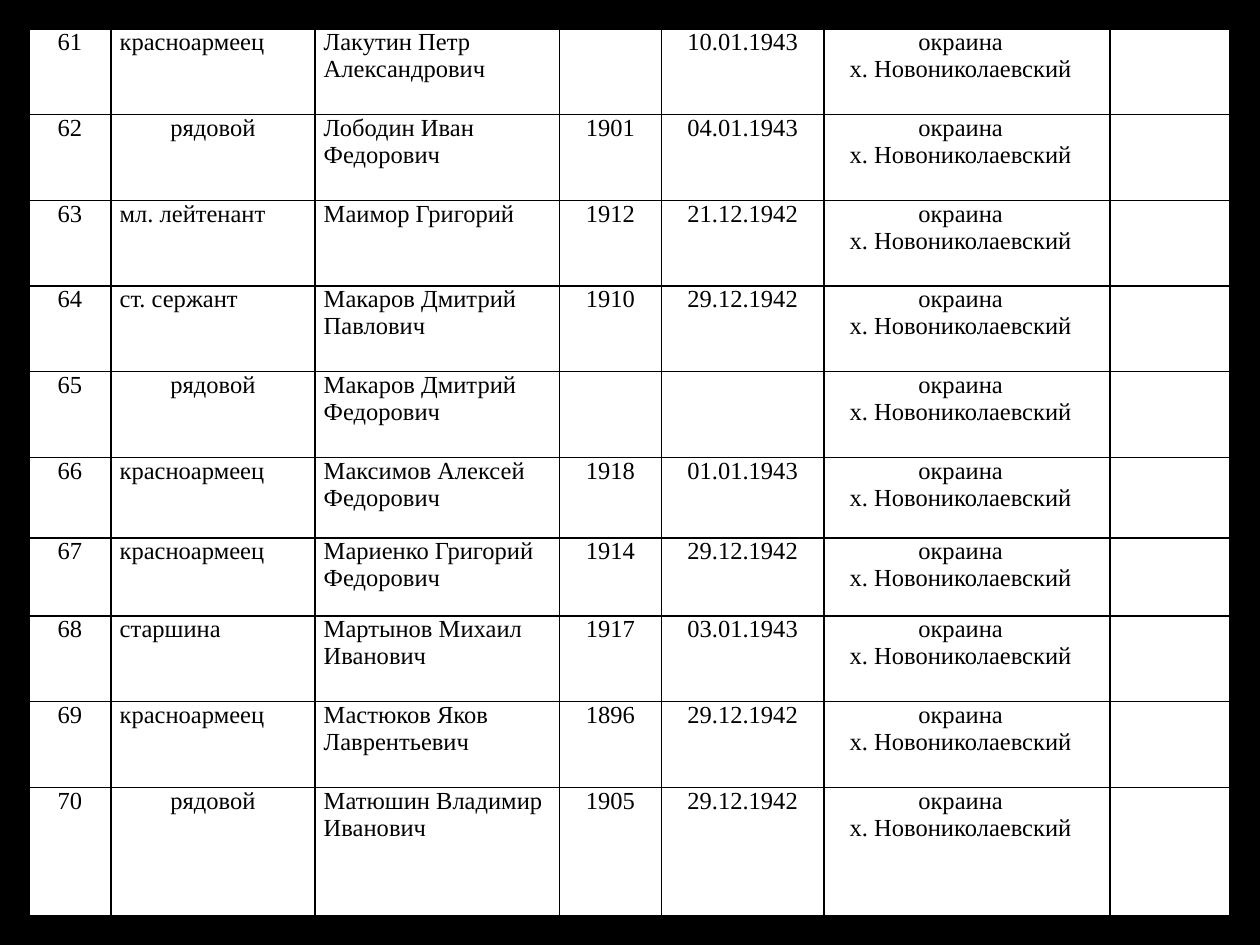
from lxml import etree
from pptx import Presentation
from pptx.dml.color import RGBColor
from pptx.enum import text
from pptx.oxml import ns
from pptx.util import Inches, Pt

COLORS = {"back": "000000", "cell": "FFFFFF", "ink": "000000", "line": "000000"}
FONT = "Times New Roman"
COLS = [0.65, 1.62, 1.94, 0.81, 1.29, 2.27, 0.95]
HEIGHTS = [0.68] * 5 + [0.64, 0.62, 0.68, 0.68, 1.02]
RANK, NAME, PLACE = 1, 2, 5
FIRST = 61
SITE = "окраина\nх. Новониколаевский"

# Rank, name, year of birth, date of death
PEOPLE = [
    ("красноармеец", "Лакутин Петр Александрович", "", "10.01.1943"),
    ("рядовой", "Лободин Иван Федорович", "1901", "04.01.1943"),
    ("мл. лейтенант", "Маимор Григорий", "1912", "21.12.1942"),
    ("ст. сержант", "Макаров Дмитрий Павлович", "1910", "29.12.1942"),
    ("рядовой", "Макаров Дмитрий Федорович", "", ""),
    ("красноармеец", "Максимов Алексей Федорович", "1918", "01.01.1943"),
    ("красноармеец", "Мариенко Григорий Федорович", "1914", "29.12.1942"),
    ("старшина", "Мартынов Михаил Иванович", "1917", "03.01.1943"),
    ("красноармеец", "Мастюков Яков Лаврентьевич", "1896", "29.12.1942"),
    ("рядовой", "Матюшин Владимир Иванович", "1905", "29.12.1942"),
]


def color(name):
    return RGBColor.from_string(COLORS[name])


def set_lines(cell):
    """Draw a thin line on each side; lines must precede the fill."""
    props = cell._tc.get_or_add_tcPr()
    for spot, side in enumerate(("a:lnL", "a:lnR", "a:lnT", "a:lnB")):
        line = etree.Element(ns.qn(side), w=str(Pt(1)))
        fill = etree.SubElement(line, ns.qn("a:solidFill"))
        etree.SubElement(fill, ns.qn("a:srgbClr"), val=COLORS["line"])
        props.insert(spot, line)


def fill_cell(cell, words, align):
    cell.fill.solid()
    cell.fill.fore_color.rgb = color("cell")
    set_lines(cell)
    cell.margin_left = cell.margin_right = Inches(0.07)
    cell.margin_top = cell.margin_bottom = 0
    cell.text = words
    for para in cell.text_frame.paragraphs:
        para.alignment = align
        para.font.name = FONT
        para.font.size = Pt(14)
        para.font.color.rgb = color("ink")


def add_roll(slide, left, top, width, height):
    """Place the roll of names in the given box."""
    frame = slide.shapes.add_table(len(PEOPLE), len(COLS), left, top, width, height)
    table = frame.table
    table.first_row = table.horz_banding = False
    for col, size in zip(table.columns, COLS):
        col.width = Inches(size)
    for row, size in zip(table.rows, HEIGHTS):
        row.height = Inches(size)
    for r, person in enumerate(PEOPLE):
        for c, words in enumerate((str(FIRST + r), *person, SITE, "")):
            flush = c == NAME or (c == RANK and words != "рядовой")
            align = text.PP_ALIGN.LEFT if flush else text.PP_ALIGN.CENTER
            fill_cell(table.cell(r, c), words, align)
        # The first line of the place sits slightly left of centre
        para = table.cell(r, PLACE).text_frame.paragraphs[0]
        para._p.get_or_add_pPr().set("marR", str(Inches(0.1)))


def main():
    deck = Presentation()
    deck.slide_width, deck.slide_height = Inches(10), Inches(7.5)
    slide = deck.slides.add_slide(deck.slide_layouts[6])
    slide.background.fill.solid()
    slide.background.fill.fore_color.rgb = color("back")
    add_roll(slide, Inches(0.23), Inches(0.23), Inches(sum(COLS)), Inches(sum(HEIGHTS)))
    deck.save("out.pptx")


if __name__ == "__main__":
    main()
